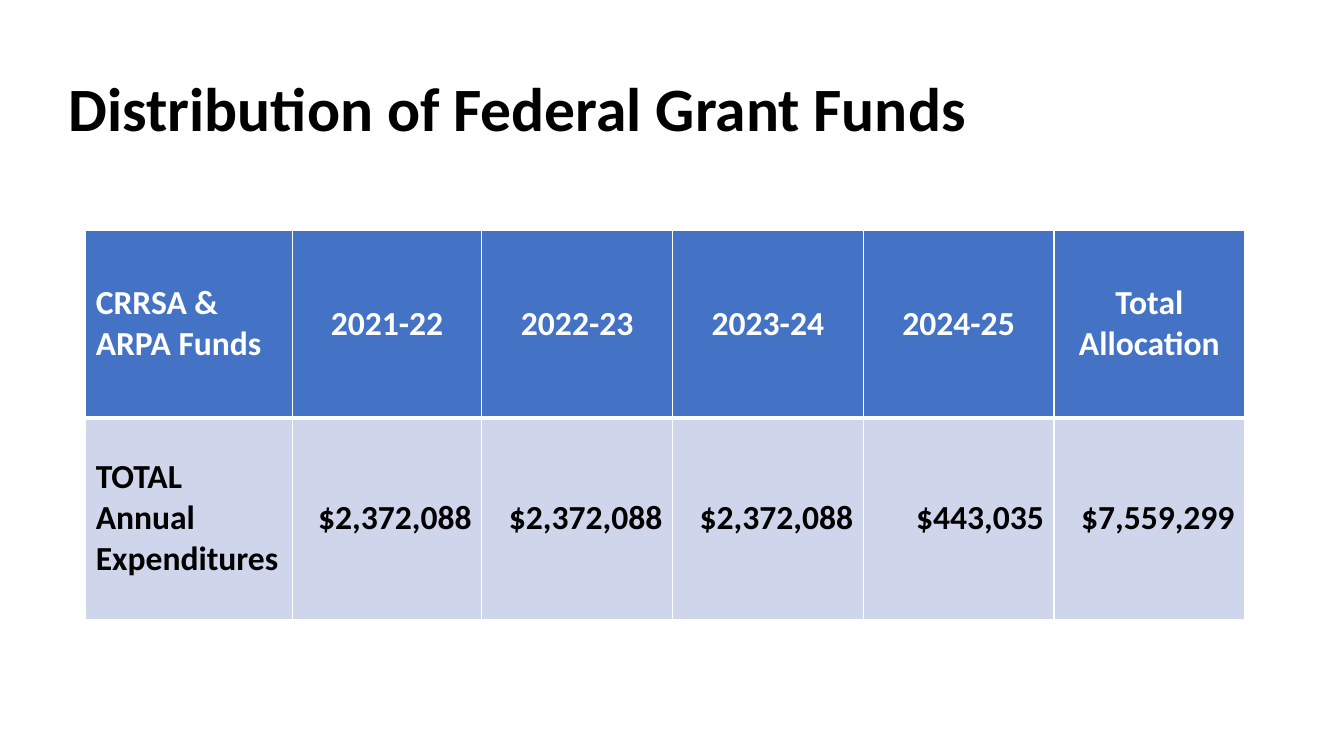
from lxml import etree
from pptx import Presentation
from pptx.dml.color import RGBColor
from pptx.enum.text import MSO_ANCHOR, PP_ALIGN
from pptx.oxml.ns import qn
from pptx.util import Pt

LEFT, CENTER, RIGHT = PP_ALIGN.LEFT, PP_ALIGN.CENTER, PP_ALIGN.RIGHT
MIDDLE = MSO_ANCHOR.MIDDLE
BLACK = RGBColor(0, 0, 0)
WHITE = RGBColor(255, 255, 255)
BLUE = RGBColor(0x44, 0x72, 0xC4)
PALE = RGBColor(0xCF, 0xD5, 0xEA)

TITLE = "Distribution of Federal Grant Funds"
ROWS = [
    ["CRRSA & ARPA Funds", "2021-22", "2022-23", "2023-24", "2024-25",
     "Total Allocation"],
    ["TOTAL Annual Expenditures", "$2,372,088", "$2,372,088", "$2,372,088",
     "$443,035", "$7,559,299"],
]
# fill, text colour, alignment of the figures, top and bottom line widths
LOOKS = [(BLUE, WHITE, CENTER, 1, 3), (PALE, BLACK, RIGHT, 3, 1)]
WIDTHS = [147.6, 135.4] + [136.25] * 4
HEIGHTS = [134, 144]


def style(para, size, color, align):
    para.alignment = align
    font = para.font
    for key, val in {"name": "Calibri", "size": Pt(size), "bold": True}.items():
        setattr(font, key, val)
    font.color.rgb = color


def edge(cell, widths):
    """Draw white cell borders, given widths by side, ahead of the fill."""
    props = cell._tc.get_or_add_tcPr()
    for spot, (side, width) in enumerate(widths.items()):
        line = etree.Element(qn("a:ln" + side), w=str(Pt(width)))
        fill = etree.SubElement(line, qn("a:solidFill"))
        etree.SubElement(fill, qn("a:srgbClr"), val=str(WHITE))
        props.insert(spot, line)


def add_title(slide):
    title = slide.shapes.title
    box = {"left": 42, "top": 27.5, "width": 828, "height": 104.4}
    for key, val in box.items():
        setattr(title, key, Pt(val))
    frame = title.text_frame
    frame.text = TITLE
    frame.vertical_anchor = MIDDLE
    frame.word_wrap = True
    para = frame.paragraphs[0]
    para.line_spacing = 0.9
    style(para, 44, BLACK, LEFT)


def add_funds(slide):
    table = slide.shapes.add_table(
        len(ROWS), len(WIDTHS), Pt(61.2), Pt(164.4),
        Pt(sum(WIDTHS)), Pt(sum(HEIGHTS))).table
    for col, width in zip(table.columns, WIDTHS):
        col.width = Pt(width)
    for r, (texts, look) in enumerate(zip(ROWS, LOOKS)):
        fill, color, align, top, bottom = look
        table.rows[r].height = Pt(HEIGHTS[r])
        for c, text in enumerate(texts):
            cell = table.cell(r, c)
            cell.text = text
            cell.vertical_anchor = MIDDLE
            cell.fill.solid()
            cell.fill.fore_color.rgb = fill
            style(cell.text_frame.paragraphs[0], 24, color, align if c else LEFT)
            edge(cell, {"L": 1, "R": 1, "T": top, "B": bottom})


def main():
    deck = Presentation()
    deck.slide_width, deck.slide_height = Pt(960), Pt(540)
    slide = deck.slides.add_slide(deck.slide_layouts[5])
    add_title(slide)
    add_funds(slide)
    deck.save("out.pptx")


if __name__ == "__main__":
    main()
